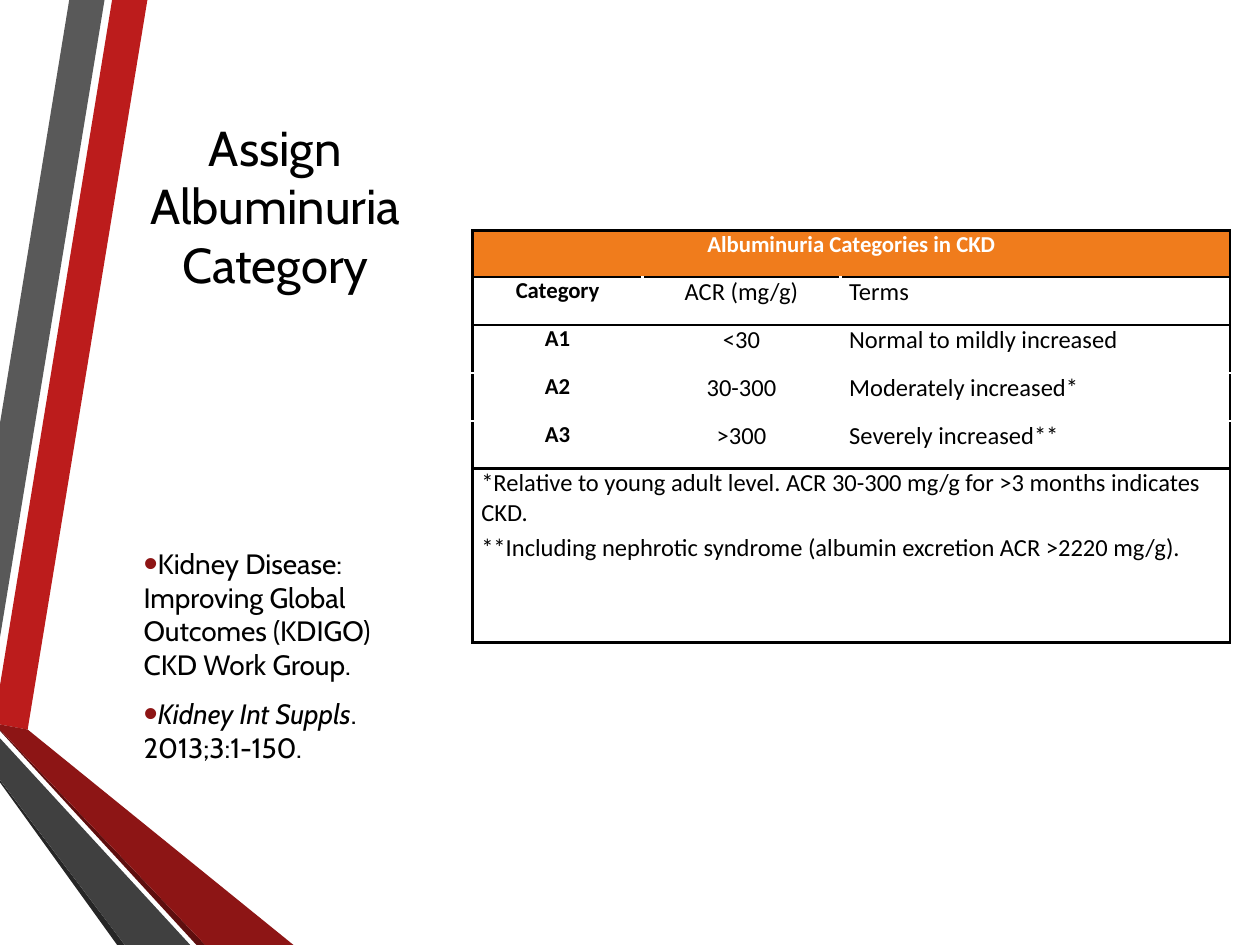
"""Build the slide on albuminuria categories in chronic kidney disease."""
import pptx
import pptx.dml.color
import pptx.enum.text
import pptx.oxml
import pptx.oxml.ns
import pptx.util
from lxml import etree

deck = pptx.Presentation()
deck.slide_width = pptx.util.Inches(10)
deck.slide_height = pptx.util.Inches(7.5)
unit = deck.slide_width / 100
slide = deck.slides.add_slide(deck.slide_layouts[1])
align = pptx.enum.text.PP_ALIGN
middle = pptx.enum.text.MSO_ANCHOR.MIDDLE
drawing_ns = pptx.oxml.ns.nsdecls("a")


def grid(count):
    """Turn a count of grid units, 100 across the slide, into a length."""
    return pptx.util.Emu(round(count * unit))


def colour(code):
    """Turn a hex string into a colour."""
    return pptx.dml.color.RGBColor.from_string(code)


ribbons = [
    ("BC1C1C", [(0, 54.4), (0, 57.5), (2.2, 57.9), (11.7, 0), (8.9, 0)]),
    ("595959", [(8.3, 0), (5.5, 0), (0, 33.6), (0, 50.6)]),
    ("262626", [(0, 61.9), (0, 62.1), (9.3, 75), (9.9, 75)]),
    ("5E0E0E", [(0, 57.9), (0, 58), (15.6, 75), (16.3, 75)]),
    ("8D1515", [(0, 57.9), (16.3, 75), (23.3, 75), (2.2, 57.9), (0, 57.5)]),
    ("404040", [(0, 61.9), (9.9, 75), (15.1, 75), (0, 58.6)]),
]
for shade, corners in ribbons:
    points = [(grid(x), grid(y)) for x, y in corners]
    outline = slide.shapes.build_freeform(*points[0])
    outline.add_line_segments(points[1:], close=True)
    ribbon = outline.convert_to_shape()
    ribbon.shadow.inherit = False
    ribbon.fill.solid()
    ribbon.fill.fore_color.rgb = colour(shade)
    ribbon.line.fill.background()

heading = slide.shapes.title
sources = slide.placeholders[1]
for holder, top, height in ((heading, 6.7, 19.2), (sources, 34.9, 34.2)):
    holder.left, holder.top = grid(10.3), grid(top)
    holder.width, holder.height = grid(23.1), grid(height)
    holder.text_frame.word_wrap = True
    holder.text_frame.auto_size = pptx.enum.text.MSO_AUTO_SIZE.NONE
    holder.text_frame.vertical_anchor = middle

heading.text_frame.text = "Assign Albuminuria Category"
heading_line = heading.text_frame.paragraphs[0]
heading_line.alignment = align.CENTER
heading_line.font.size = pptx.util.Pt(28)
heading_line.font.name = "Cabin"
heading_line.font.color.rgb = colour("000000")

citations = [
    [("Kidney Disease: Improving Global Outcomes (KDIGO) CKD Work Group.", False)],
    [("Kidney Int Suppls", True), (". 2013;3:1-150.", False)],
]
for index, parts in enumerate(citations):
    frame = sources.text_frame
    citation = frame.add_paragraph() if index else frame.paragraphs[0]
    citation.space_before = pptx.util.Pt(3 if index else 0)
    citation.space_after = pptx.util.Pt(6)
    properties = citation._p.get_or_add_pPr()
    properties.set("marL", str(grid(0.1)))
    properties.set("indent", "0")
    for bullet in (
        f'<a:buClr {drawing_ns}><a:srgbClr val="8D1515"/></a:buClr>',
        f'<a:buSzPct {drawing_ns} val="145000"/>',
        f'<a:buFont {drawing_ns} typeface="Arial"/>',
        f'<a:buChar {drawing_ns} char="•"/>',
    ):
        properties.append(pptx.oxml.parse_xml(bullet))
    citation.font.size = pptx.util.Pt(16)
    citation.font.name = "Cabin"
    citation.font.color.rgb = colour("000000")
    for words, italic in parts:
        run = citation.add_run()
        run.text = words
        if italic:
            run.font.italic = True

rows = [
    ["Albuminuria Categories in CKD"],
    ["Category", "ACR (mg/g)", "Terms"],
    ["A1", "<30", "Normal to mildly increased"],
    ["A2", "30-300", "Moderately increased*"],
    ["A3", ">300", "Severely increased**"],
    ["*Relative to young adult level. ACR 30-300 mg/g for >3 months indicates CKD.\n"
     "**Including nephrotic syndrome (albumin excretion ACR >2220 mg/g)."],
]
widths = [13.5, 15.7, 30.9]
heights = [3.7] + [3.8] * 4 + [13.8]
last_row, last_column = len(rows) - 1, len(widths) - 1
categories = slide.shapes.add_table(
    len(rows), len(widths), grid(37.5), grid(18.3), grid(sum(widths)), grid(sum(heights))
).table
for column, width in zip(categories.columns, widths):
    column.width = grid(width)
for row, height in zip(categories.rows, heights):
    row.height = grid(height)

for r, texts in enumerate(rows):
    spanned = len(texts) == 1
    if spanned:
        categories.cell(r, 0).merge(categories.cell(r, last_column))
    for c in range(len(widths)):
        cell = categories.cell(r, c)
        cell.margin_left = cell.margin_right = cell.margin_top = cell.margin_bottom = 0
        black_edges = {
            "lnL": spanned or c == 0,
            "lnR": spanned or c == last_column,
            "lnT": r not in (3, 4),
            "lnB": r not in (2, 3),
        }
        for edge, black in black_edges.items():
            line = etree.SubElement(
                cell._tc.get_or_add_tcPr(), pptx.oxml.ns.qn(f"a:{edge}"),
                w=str(pptx.util.Pt(1.5)))
            ink = etree.SubElement(line, pptx.oxml.ns.qn("a:solidFill"))
            etree.SubElement(ink, pptx.oxml.ns.qn("a:srgbClr"),
                             val="000000" if black else "FFFFFF")
        cell.fill.solid()
        cell.fill.fore_color.rgb = colour("FFFFFF" if r else "F07C1C")
        if c >= len(texts):
            continue
        cell.text = texts[c]
        left_aligned = r == last_row or c == last_column
        bold = c == 0 and r < last_row
        if left_aligned:
            cell.margin_left = grid(0.7)
        for index, entry in enumerate(cell.text_frame.paragraphs):
            entry.alignment = align.LEFT if left_aligned else align.CENTER
            entry.space_before = pptx.util.Pt(2.6 if index else 0)
            entry.font.size = pptx.util.Pt(13 if bold else 14)
            entry.font.name = "Calibri"
            entry.font.bold = bold
            entry.font.color.rgb = colour("000000" if r else "FFFFFF")

deck.save("out.pptx")
